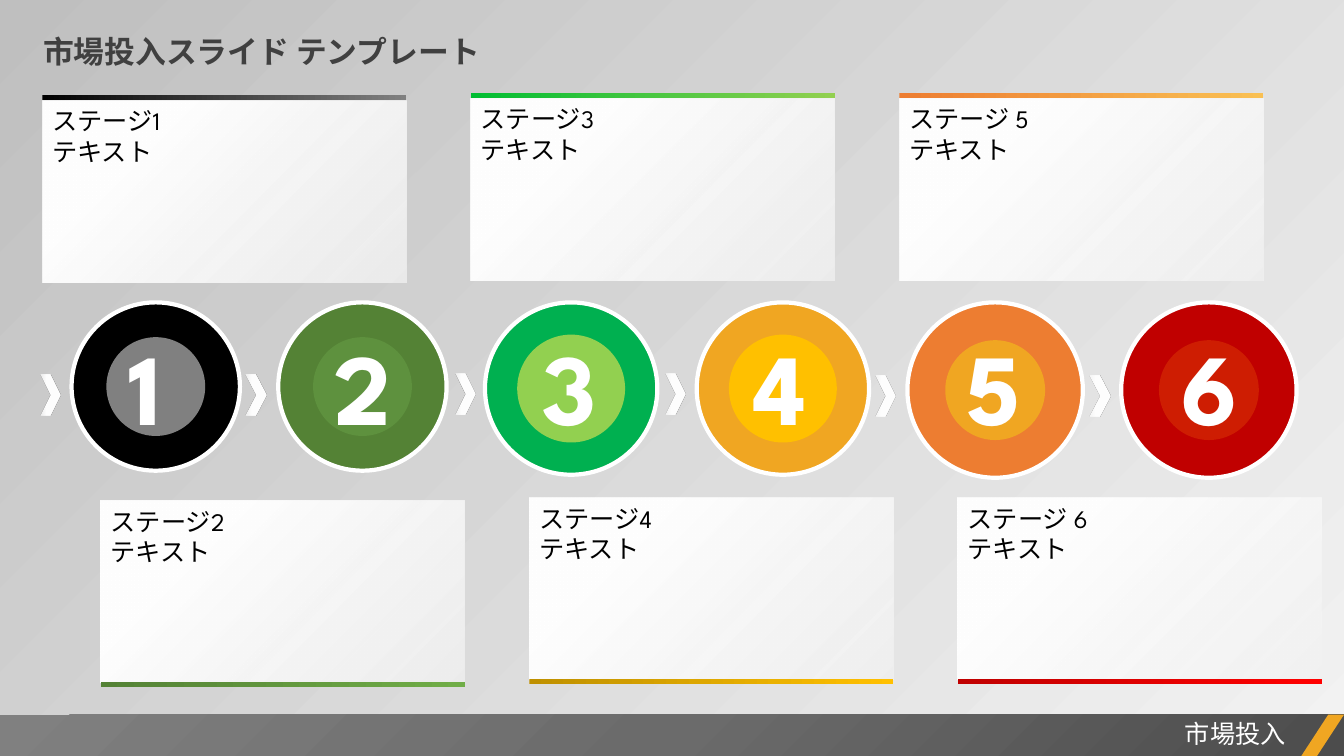
"""Build the six-stage go-to-market slide."""
from typing import Any, NamedTuple, Optional

from lxml.etree import SubElement
from pptx import Presentation
from pptx.dml.color import RGBColor
from pptx.enum.shapes import MSO_SHAPE as SHAPE
from pptx.enum.text import MSO_ANCHOR as ANCHOR, MSO_AUTO_SIZE as AUTO, PP_ALIGN as ALIGN
from pptx.oxml.ns import qn
from pptx.util import Inches, Pt

FONT = "League Spartan"
CARD_W, CARD_H, BAR_H = 3.61, 1.8, 0.05
CARD_X, CARD_STEP, LOWER_SHIFT = 0.42, 4.25, 0.58
CIRCLE_Y = 3


class Stop(NamedTuple):
    pos: int
    color: str
    alpha: int = 100


class Stage(NamedTuple):
    label: str
    card_y: float
    bar: tuple[str, str]
    circle_x: float
    outer_d: float
    inner_d: float
    outer: str
    inner: str
    number_x: float
    number_w: float
    chevron_x: float
    chevron_y: float


STAGES = [
    Stage("ステージ1", 1, ("000000", "808080"), 0.71, 1.67, 0.98,
          "000000", "808080", 1.18, 0.72, 0.4, 3.72),
    Stage("ステージ2", 4.97, ("548235", "70AD47"), 2.76, 1.67, 0.98,
          "548235", "5E913E", 3.22, 0.92, 2.44, 3.72),
    Stage("ステージ3", 0.98, ("00BD32", "92D050"), 4.81, 1.71, 1.07,
          "00B050", "92D050", 5.28, 0.92, 4.52, 3.71),
    Stage("ステージ4", 4.94, ("BF9000", "FFC000"), 6.91, 1.71, 1.07,
          "F0A622", "FFC000", 7.37, 0.92, 6.6, 3.71),
    Stage("ステージ 5", 0.98, ("ED7D31", "F9C053"), 9, 1.74, 0.99,
          "ED7D31", "F0A622", 9.49, 0.92, 8.68, 3.73),
    Stage("ステージ 6", 4.94, ("C00000", "FF0000"), 11.12, 1.74, 0.99,
          "C00000", "CE1D02", 11.62, 0.92, 10.81, 3.73),
]
CARD_STOPS = [Stop(0, "F2F2F2", 80), Stop(74, "FFFFFF")]
CHEVRON_STOPS = [Stop(0, "FFFFFF", 62), Stop(31, "FFFFFF")]


def rgb(color: str) -> RGBColor:
    return RGBColor.from_string(color)


def set_gradient(fill: Any, element: Any, stops: list[Stop], angle: Optional[int] = 0) -> None:
    """Fill with a linear gradient, or a circular one from the lower right if angle is None."""
    fill.gradient()
    grad = next(element.iter(qn("a:gradFill")))
    for child in list(grad):
        grad.remove(child)
    gs_list = SubElement(grad, qn("a:gsLst"))
    for stop in stops:
        gs = SubElement(gs_list, qn("a:gs"), pos=str(stop.pos * 1000))
        clr = SubElement(gs, qn("a:srgbClr"), val=stop.color)
        if stop.alpha < 100:
            SubElement(clr, qn("a:alpha"), val=str(stop.alpha * 1000))
    if angle is None:
        circle = SubElement(grad, qn("a:path"), path="circle")
        SubElement(circle, qn("a:fillToRect"), l="100000", t="100000")
    else:
        SubElement(grad, qn("a:lin"), ang=str(angle * 60000), scaled="0")


def add_shape(shapes: Any, kind: Any, x: float, y: float, w: float, h: float, *,
              color: Optional[str] = None, stops: Optional[list[Stop]] = None,
              angle: Optional[int] = 0, line: Optional[str] = None,
              adj: Optional[float] = None) -> Any:
    sp = shapes.add_shape(kind, Inches(x), Inches(y), Inches(w), Inches(h))
    sp.shadow.inherit = False
    if adj is not None:
        sp.adjustments[0] = adj
    if stops:
        set_gradient(sp.fill, sp.element, stops, angle)
    else:
        sp.fill.solid()
        sp.fill.fore_color.rgb = rgb(color)
    if line:
        sp.line.color.rgb = rgb(line)
        sp.line.width = Pt(3)
    else:
        sp.line.fill.background()
    return sp


def write(sp: Any, text: str, *, size: int, color: str, bold: bool = False,
          align: Any = ALIGN.LEFT) -> None:
    tf = sp.text_frame
    tf.word_wrap = True
    tf.vertical_anchor = ANCHOR.TOP
    tf.text = text
    for p in tf.paragraphs:
        p.alignment = align
        for r in p.runs:
            r.font.name, r.font.size, r.font.bold = FONT, Pt(size), bold
            r.font.color.rgb = rgb(color)


def add_text(shapes: Any, text: str, x: float, y: float, w: float, h: float,
             **style: Any) -> None:
    sp = shapes.add_textbox(Inches(x), Inches(y), Inches(w), Inches(h))
    write(sp, text, **style)
    sp.text_frame.auto_size = AUTO.SHAPE_TO_FIT_TEXT


def add_card(shapes: Any, index: int, stage: Stage) -> None:
    column, lower = divmod(index, 2)
    x = CARD_X + column * CARD_STEP + lower * LOWER_SHIFT
    bar_y = stage.card_y + (CARD_H if lower else -0.06)
    card = add_shape(shapes, SHAPE.ROUNDED_RECTANGLE, x, stage.card_y, CARD_W, CARD_H,
                     stops=CARD_STOPS, angle=225, adj=0)
    write(card, f"{stage.label}\nテキスト", size=18, color="000000")
    start, end = stage.bar
    add_shape(shapes, SHAPE.ROUNDED_RECTANGLE, x, bar_y, CARD_W, BAR_H,
              stops=[Stop(0, start), Stop(100, end)], adj=0)


def add_circle(shapes: Any, number: int, stage: Stage) -> None:
    rings = shapes.add_group_shape().shapes
    inset = (stage.outer_d - stage.inner_d) / 2
    add_shape(rings, SHAPE.OVAL, stage.circle_x, CIRCLE_Y, stage.outer_d, stage.outer_d,
              color=stage.outer, line="FFFFFF")
    add_shape(rings, SHAPE.OVAL, stage.circle_x + inset, CIRCLE_Y + inset,
              stage.inner_d, stage.inner_d, color=stage.inner)
    add_shape(shapes, SHAPE.CHEVRON, stage.chevron_x, stage.chevron_y, 0.2, 0.4,
              stops=CHEVRON_STOPS)
    add_text(shapes, str(number), stage.number_x, 3.17, stage.number_w, 1.31,
             size=72, color="FFFFFF", bold=True)


def main() -> None:
    prs = Presentation()
    prs.slide_width, prs.slide_height = Inches(13.33), Inches(7.5)
    s = prs.slides.add_slide(prs.slide_layouts[6])
    set_gradient(s.background.fill, s.element,
                 [Stop(0, "F2F2F2", 40), Stop(100, "BFBFBF")], 225)

    add_text(s.shapes, "市場投入スライド テンプレート", 0.33, 0.28, 8.61, 0.47,
             size=22, color="404040", bold=True)
    add_shape(s.shapes, SHAPE.RECTANGLE, 0, 7.09, 13.33, 0.42, angle=None,
              stops=[Stop(0, "4C4C4C"), Stop(50, "6B6B6B"), Stop(100, "808080")])
    add_shape(s.shapes, SHAPE.PARALLELOGRAM, 12.9, 7.09, 0.43, 0.42,
              color="F0A622", adj=0.652)
    add_text(s.shapes, "市場投入", 5.25, 7.08, 7.6, 0.4,
             size=18, color="FFFFFF", align=ALIGN.RIGHT)

    for index, stage in enumerate(STAGES):
        add_card(s.shapes, index, stage)
        add_circle(s.shapes, index + 1, stage)
    prs.save("out.pptx")


if __name__ == "__main__":
    main()
